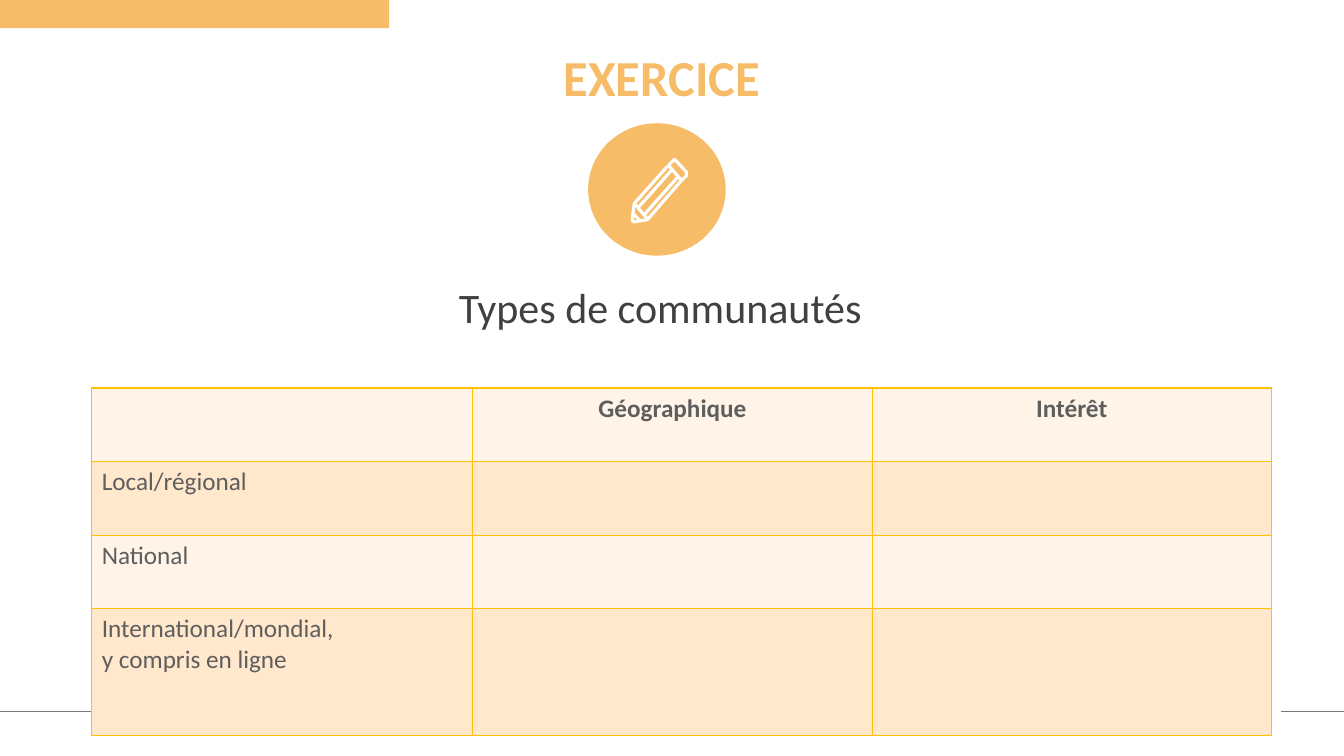
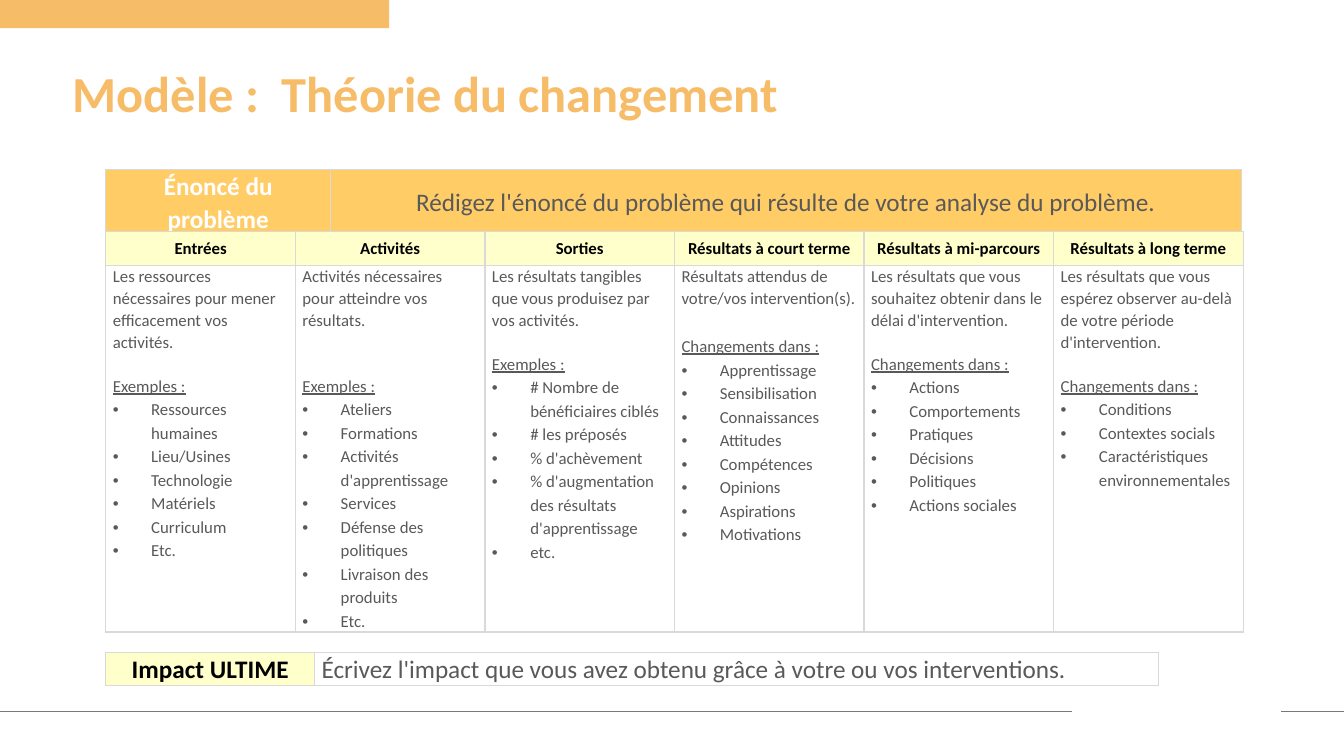
from lxml.etree import SubElement
from pptx import Presentation
from pptx.dml.color import RGBColor
from pptx.enum.shapes import MSO_CONNECTOR, MSO_SHAPE
from pptx.enum.text import MSO_ANCHOR, MSO_AUTO_SIZE, PP_ALIGN
from pptx.oxml.ns import qn
from pptx.util import Inches, Pt

FONT = "Calibri"
ORANGE = RGBColor(0xF6, 0xBC, 0x67)
GOLD = RGBColor(0xFF, 0xC0, 0x00)
AMBER = RGBColor(0xFF, 0xCC, 0x66)
CREAM = RGBColor(0xFF, 0xF4, 0xE7)
PEACH = RGBColor(0xFF, 0xE8, 0xCC)
PALE_YELLOW = RGBColor(0xFF, 0xFF, 0xCC)
WHITE = RGBColor(0xFF, 0xFF, 0xFF)
BLACK = RGBColor(0x00, 0x00, 0x00)
RULE_GREY = RGBColor(0x79, 0x79, 0x79)
BORDER_GREY = RGBColor(0xD9, 0xD9, 0xD9)
TABLE_GREY = RGBColor(0x5E, 0x5E, 0x5E)
TEXT_GREY = RGBColor(0x59, 0x59, 0x59)
DARK_GREY = RGBColor(0x40, 0x40, 0x40)

SLIDE_W, SLIDE_H = 13.33, 7.5
FOOTER_Y = 7.06
FOOTER_RULES = [(0, 10.63), (12.71, SLIDE_W)]
BULLET_INDENT = 0.38
BLANK_LINE = 15.7

TITLE_FONT = {"size": Pt(36), "bold": True, "color": ORANGE}
SUBTITLE_FONT = {"size": Pt(30), "color": DARK_GREY}
GRID_FONT = {"size": Pt(18), "bold": False, "color": TABLE_GREY}
GRID_HEAD = {**GRID_FONT, "bold": True}
BANNER_TEXT = {"size": Pt(18), "bold": False, "color": TEXT_GREY}
BANNER_HEAD = {"size": Pt(18), "bold": True, "color": WHITE}
IMPACT_HEAD = {**BANNER_HEAD, "color": BLACK}
COLUMN_HEAD = {"size": Pt(12), "bold": True, "color": BLACK}
COLUMN_TEXT = {"size": Pt(12), "bold": False, "color": TEXT_GREY}
CENTRED = {"alignment": PP_ALIGN.CENTER}
HEADING = {"line_spacing": 0.9}
LOOSE = {"line_spacing": 1.07}
LOOSE_CENTRED = {**LOOSE, **CENTRED}
TIGHT_CELL = {"margin_left": Inches(0.07), "margin_right": Inches(0.07),
              "margin_top": 0, "margin_bottom": 0}
MIDDLE_CELL = {**TIGHT_CELL, "vertical_anchor": MSO_ANCHOR.MIDDLE}

PENCIL = [
    ([(84, 36), (79, 41), (92, 56), (97, 51), (97, 48), (86, 36), (85, 35)], True),
    ([(88, 53), (55, 90)], False),
    ([(78, 42), (45, 79), (43, 95), (44, 97), (45, 97), (58, 95), (59, 94), (91, 57)], False),
    ([(49, 83), (82, 46)], False),
    ([(50, 95), (44, 89)], False),
    ([(46, 80), (58, 94)], False),
]

COMMUNITIES = [
    ["", "Géographique", "Intérêt"],
    ["Local/régional", "", ""],
    ["National", "", ""],
    ["International/mondial, \vy compris en ligne", "", ""],
]

EXAMPLES, CHANGES = "Exemples :", "Changements dans :"
STAGES = [
    ("Entrées", "Les ressources nécessaires pour mener efficacement vos activités.",
     EXAMPLES, BLANK_LINE,
     ["Ressources humaines", "Lieu/Usines", "Technologie", "Matériels", "Curriculum", "Etc."]),
    ("Activités", "Activités nécessaires pour atteindre vos résultats.",
     EXAMPLES, 2 * BLANK_LINE,
     ["Ateliers", "Formations", "Activités d'apprentissage", "Services",
      "Défense des politiques", "Livraison des produits", "Etc."]),
    ("Sorties", "Les résultats tangibles que vous produisez par vos activités.",
     EXAMPLES, BLANK_LINE,
     ["# Nombre de bénéficiaires ciblés", "# les préposés", "% d'achèvement",
      "% d'augmentation des résultats d'apprentissage", "etc."]),
    ("Résultats à court terme", "Résultats attendus de votre/vos intervention(s).",
     CHANGES, BLANK_LINE + 3,
     ["Apprentissage", "Sensibilisation", "Connaissances", "Attitudes", "Compétences",
      "Opinions", "Aspirations", "Motivations"]),
    ("Résultats à mi-parcours",
     "Les résultats que vous souhaitez obtenir dans le délai d'intervention.",
     CHANGES, BLANK_LINE,
     ["Actions", "Comportements", "Pratiques", "Décisions", "Politiques", "Actions sociales"]),
    ("Résultats à long terme",
     "Les résultats que vous espérez observer au-delà de votre période d'intervention.",
     CHANGES, BLANK_LINE,
     ["Conditions", "Contextes socials", "Caractéristiques environnementales"]),
]


def set_attrs(obj, values):
    """Set each attribute of an object from a dict."""
    for name, value in values.items():
        setattr(obj, name, value)


def write(p, text, layout, font):
    """Put formatted text in a paragraph."""
    p.text = text
    set_attrs(p, layout)
    for r in p.runs:
        r.font.name = FONT
        for name, value in font.items():
            if name == "color":
                r.font.color.rgb = value
            else:
                setattr(r.font, name, value)


def add_bullet(p):
    """Give a paragraph a hanging round bullet."""
    pPr = p._p.get_or_add_pPr()
    pPr.set("marL", str(Inches(BULLET_INDENT)))
    pPr.set("indent", str(-Inches(BULLET_INDENT)))
    SubElement(pPr, qn("a:buFont"), typeface="Arial")
    SubElement(pPr, qn("a:buChar"), char="•")


def add_frame(s):
    """Draw the top band and the footer rules."""
    band = s.shapes.add_shape(MSO_SHAPE.RECTANGLE, 0, 0, Inches(3.86), Inches(0.28))
    paint(band, ORANGE)
    band.line.fill.background()
    for start, end in FOOTER_RULES:
        rule = s.shapes.add_connector(MSO_CONNECTOR.STRAIGHT, Inches(start), Inches(FOOTER_Y),
                                      Inches(end), Inches(FOOTER_Y))
        rule.line.color.rgb = RULE_GREY
        rule.line.width = Pt(0.5)
        SubElement(rule._element.spPr, qn("a:effectLst"))


def paint(sp, colour):
    """Fill a shape with one flat colour and no shadow."""
    sp.shadow.inherit = False
    sp.fill.solid()
    sp.fill.fore_color.rgb = colour


def add_slide(prs, title, box):
    """Add a slide with the shared frame and a title in a box."""
    s = prs.slides.add_slide(prs.slide_layouts[5])
    add_frame(s)
    sp = s.shapes.title
    sp.left, sp.top, sp.width, sp.height = map(Inches, box)
    tf = sp.text_frame
    set_attrs(tf, {"word_wrap": True, "auto_size": MSO_AUTO_SIZE.NONE,
                   "vertical_anchor": MSO_ANCHOR.TOP})
    write(tf.paragraphs[0], title, {**HEADING, "alignment": PP_ALIGN.LEFT}, TITLE_FONT)
    return s


def add_pencil_badge(s, left, top, width, height):
    """Draw a pencil in a round badge."""
    badge = s.shapes.add_shape(MSO_SHAPE.FLOWCHART_CONNECTOR, Inches(left), Inches(top),
                               Inches(width), Inches(height))
    paint(badge, ORANGE)
    badge.line.color.rgb = ORANGE
    badge.line.width = Pt(1)
    for points, closed in PENCIL:
        outline = s.shapes.build_freeform(*points[0], scale=Inches(0.01))
        outline.add_line_segments(points[1:], close=closed)
        stroke = outline.convert_to_shape(Inches(left), Inches(top))
        stroke.shadow.inherit = False
        stroke.fill.background()
        stroke.line.color.rgb = WHITE
        stroke.line.width = Pt(2.25)


def add_subtitle(s, text, left, top, width, height):
    """Write a centred subtitle in a box."""
    tf = s.shapes.add_textbox(Inches(left), Inches(top), Inches(width), Inches(height)).text_frame
    tf.word_wrap = True
    write(tf.paragraphs[0], text, {**HEADING, **CENTRED}, SUBTITLE_FONT)


def add_grid(s, left, top, cols, rows, border):
    """Add a plain table with bordered cells."""
    table = s.shapes.add_table(len(rows), len(cols), Inches(left), Inches(top),
                               Inches(sum(cols)), Inches(sum(rows))).table
    table.first_row = table.horz_banding = False
    for col, width in zip(table.columns, cols):
        col.width = Inches(width)
    for row, height in zip(table.rows, rows):
        row.height = Inches(height)
    for cell in table.iter_cells():
        tcPr = cell._tc.get_or_add_tcPr()
        for side in ("lnL", "lnR", "lnT", "lnB"):
            ln = SubElement(tcPr, qn(f"a:{side}"), w=str(Pt(1)))
            SubElement(SubElement(ln, qn("a:solidFill")), qn("a:srgbClr"), val=str(border))
    return table


def fill_cell(cell, text, fill, layout, font, frame):
    """Colour a table cell and write its first paragraph."""
    cell.fill.solid()
    cell.fill.fore_color.rgb = fill
    set_attrs(cell, frame)
    write(cell.text_frame.paragraphs[0], text, layout, font)


def add_community_table(s, left, top):
    """Place the table of community types."""
    table = add_grid(s, left, top, [3.78, 3.96, 3.96], [0.73, 0.73, 0.73, 1.26], GOLD)
    for i, row in enumerate(COMMUNITIES):
        layout, font = ({}, GRID_FONT) if i else (CENTRED, GRID_HEAD)
        for j, text in enumerate(row):
            fill_cell(table.cell(i, j), text, PEACH if i % 2 else CREAM, layout, font, {})


def add_statement(s, left, top, cols, height, label, text):
    """Place a one-row table with a label and a statement."""
    table = add_grid(s, left, top, cols, [height], BORDER_GREY)
    for j, content in enumerate((label, text)):
        fill_cell(table.cell(0, j), *content)


def add_stage_table(s, left, top):
    """Place the table of stages with their examples."""
    table = add_grid(s, left, top, [1.88] * len(STAGES), [0.33, 3.57], BORDER_GREY)
    for j, (name, intro, lead, gap, items) in enumerate(STAGES):
        fill_cell(table.cell(0, j), name, PALE_YELLOW, LOOSE_CENTRED, COLUMN_HEAD, MIDDLE_CELL)
        body = table.cell(1, j)
        fill_cell(body, intro, WHITE, LOOSE, COLUMN_TEXT, TIGHT_CELL)
        tf = body.text_frame
        write(tf.add_paragraph(), lead, {**LOOSE, "space_before": Pt(gap)},
              {**COLUMN_TEXT, "underline": True})
        for item in items:
            p = tf.add_paragraph()
            add_bullet(p)
            write(p, item, {"line_spacing": 1.15}, COLUMN_TEXT)


def build_exercise(prs):
    """Build the exercise slide."""
    s = add_slide(prs, "EXERCICE", (5.49, 0.48, 2.27, 0.69))
    add_pencil_badge(s, 5.84, 1.23, 1.35, 1.3)
    add_community_table(s, 0.91, 3.85)
    add_subtitle(s, "Types de communautés", 4.36, 2.8, 4.38, 0.69)


def build_change_model(prs):
    """Build the theory of change slide."""
    s = add_slide(prs, "Modèle :  Théorie du changement", (0.62, 0.63, 12.01, 1.18))
    left = 1.05
    add_statement(
        s, left, 1.68, [2.23, 9.03], 0.63,
        ("Énoncé du problème", AMBER, LOOSE_CENTRED, BANNER_HEAD, MIDDLE_CELL),
        ("Rédigez l'énoncé du problème qui résulte de votre analyse du problème.",
         AMBER, LOOSE_CENTRED, BANNER_TEXT, MIDDLE_CELL))
    add_stage_table(s, left, 2.3)
    add_statement(
        s, left, 6.47, [2.07, 8.37], 0.31,
        ("Impact ULTIME", PALE_YELLOW, LOOSE_CENTRED, IMPACT_HEAD, MIDDLE_CELL),
        ("Écrivez l'impact que vous avez obtenu grâce à votre ou vos interventions.",
         WHITE, LOOSE, BANNER_TEXT, TIGHT_CELL))


def main():
    """Build and save the presentation."""
    prs = Presentation()
    prs.slide_width, prs.slide_height = Inches(SLIDE_W), Inches(SLIDE_H)
    build_exercise(prs)
    build_change_model(prs)
    prs.save("out.pptx")


if __name__ == "__main__":
    main()
